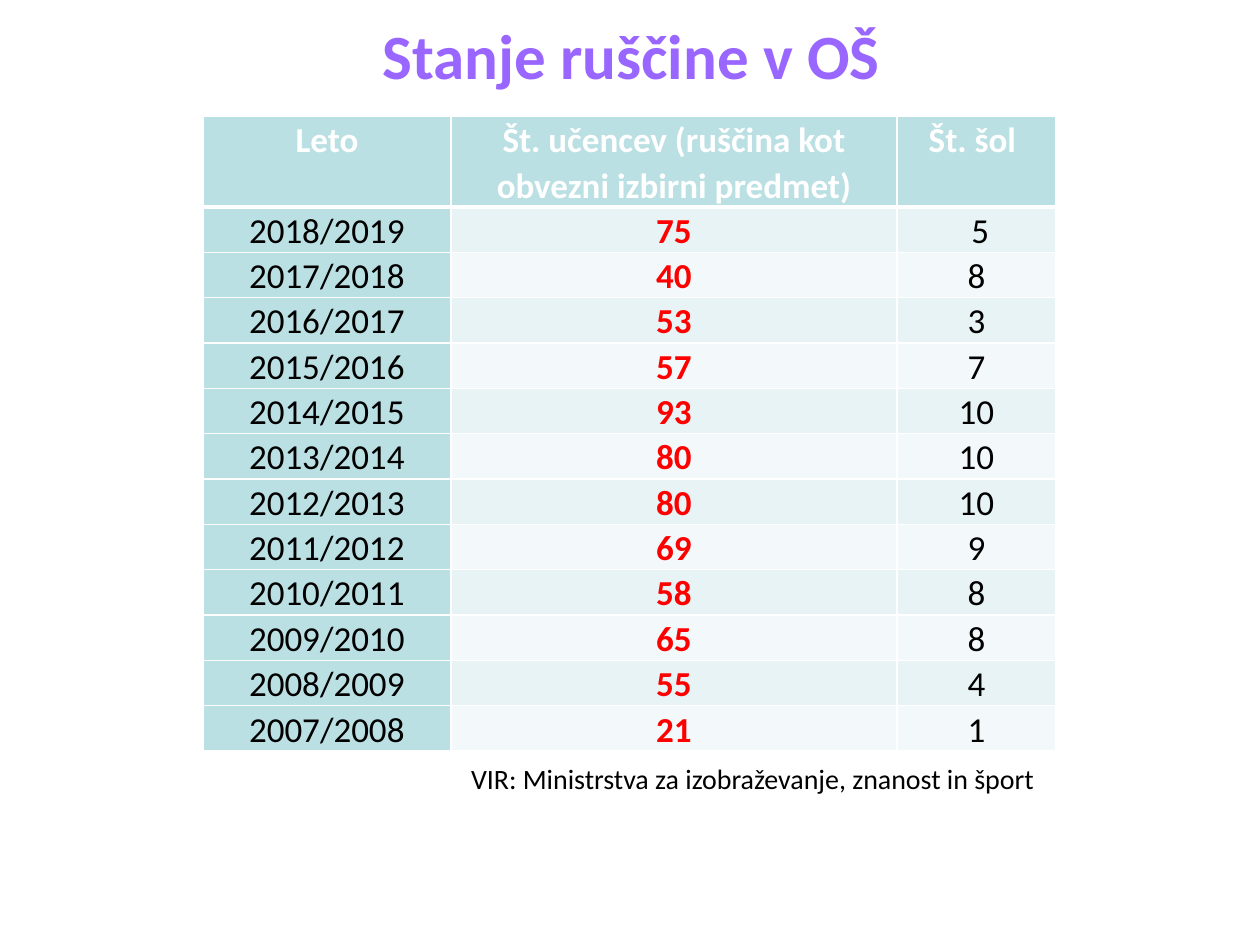
import pptx
import pptx.util
import pptx.dml.color
import pptx.enum.text
import pptx.oxml

Pt = pptx.util.Pt
Inches = pptx.util.Inches
RGB = pptx.dml.color.RGBColor.from_string
Align = pptx.enum.text.PP_ALIGN
Wide, High = Inches(10), Inches(7.5)

theme = {
    "font": "Calibri", "title": "9966FF", "ink": "000000", "white": "FFFFFF",
    "red": "FF0000", "teal": "BBE0E3", "bands": ("E7F3F4", "F3F9FA"),
    "big": 36, "body": 20, "small": 16,
}


def style(par, text, size, color, bold=False, align=Align.CENTER):
    par.text = text
    par.alignment = align
    par.font.name = theme["font"]
    par.font.size = Pt(size)
    par.font.bold = bold
    par.font.color.rgb = RGB(color)


def edge(cell, side, width):
    cell._tc.get_or_add_tcPr().append(pptx.oxml.parse_xml(
        f'<a:ln{side} xmlns:a="http://schemas.openxmlformats.org/drawingml/2006/main" w="{Pt(width)}">'
        f'<a:solidFill><a:srgbClr val="{theme["white"]}"/></a:solidFill></a:ln{side}>'))


deck = pptx.Presentation()
deck.slide_width, deck.slide_height = Wide, High
slide = deck.slides.add_slide(deck.slide_layouts[6])

title = slide.shapes.add_textbox(
    int(Wide * 0.051), int(High * 0.003), int(Wide * 0.9), int(High * 0.167)).text_frame
title.word_wrap = True
title.margin_top = Inches(0.11)
style(title.paragraphs[0], "Stanje ruščine v OŠ", theme["big"], theme["title"], True)

source = slide.shapes.add_textbox(
    int(Wide * 0.364), int(High * 0.799), int(Wide * 0.495), int(High * 0.049)).text_frame
source.word_wrap = False
style(source.paragraphs[0], "VIR: Ministrstva za izobraževanje, znanost in šport",
      theme["small"], theme["ink"], align=Align.LEFT)

heads = ("Leto", "Št. učencev (ruščina kot obvezni izbirni predmet)", "Št. šol ")
pupils = (75, 40, 53, 57, 93, 80, 80, 69, 58, 65, 55, 21)
schools = (" 5", 8, 3, 7, 10, 10, 10, 9, 8, 8, 4, 1)
years = [f"{year}/{year + 1}" for year in range(2018, 2006, -1)]
rows = [heads, *zip(years, pupils, schools)]

cols = (0.197, 0.354, 0.126)
step = High * 0.048
table = slide.shapes.add_table(
    len(rows), len(cols), int(Wide * 0.161), int(High * 0.123),
    int(Wide * sum(cols)), int(step * (len(rows) + 1))).table
for col, share in zip(table.columns, cols):
    col.width = int(Wide * share)

for r, row in enumerate(rows):
    table.rows[r].height = int(step * (1 if r else 2))
    for c, value in enumerate(row):
        cell = table.cell(r, c)
        cell.margin_left = cell.margin_right = Inches(0.07)
        cell.margin_top = cell.margin_bottom = 0
        if r == 0:
            color = theme["white"]
        else:
            color = theme["red"] if c == 1 else theme["ink"]
        par = cell.text_frame.paragraphs[0]
        style(par, str(value), theme["body"], color, r == 0 or c == 1)
        par.line_spacing = 1.07
        for side in "LRTB":
            edge(cell, side, 3 if (r, side) in ((0, "B"), (1, "T")) else 1)
        cell.fill.solid()
        band = theme["bands"][(r - 1) % 2]
        cell.fill.fore_color.rgb = RGB(theme["teal"] if r == 0 or c == 0 else band)

deck.save("out.pptx")
